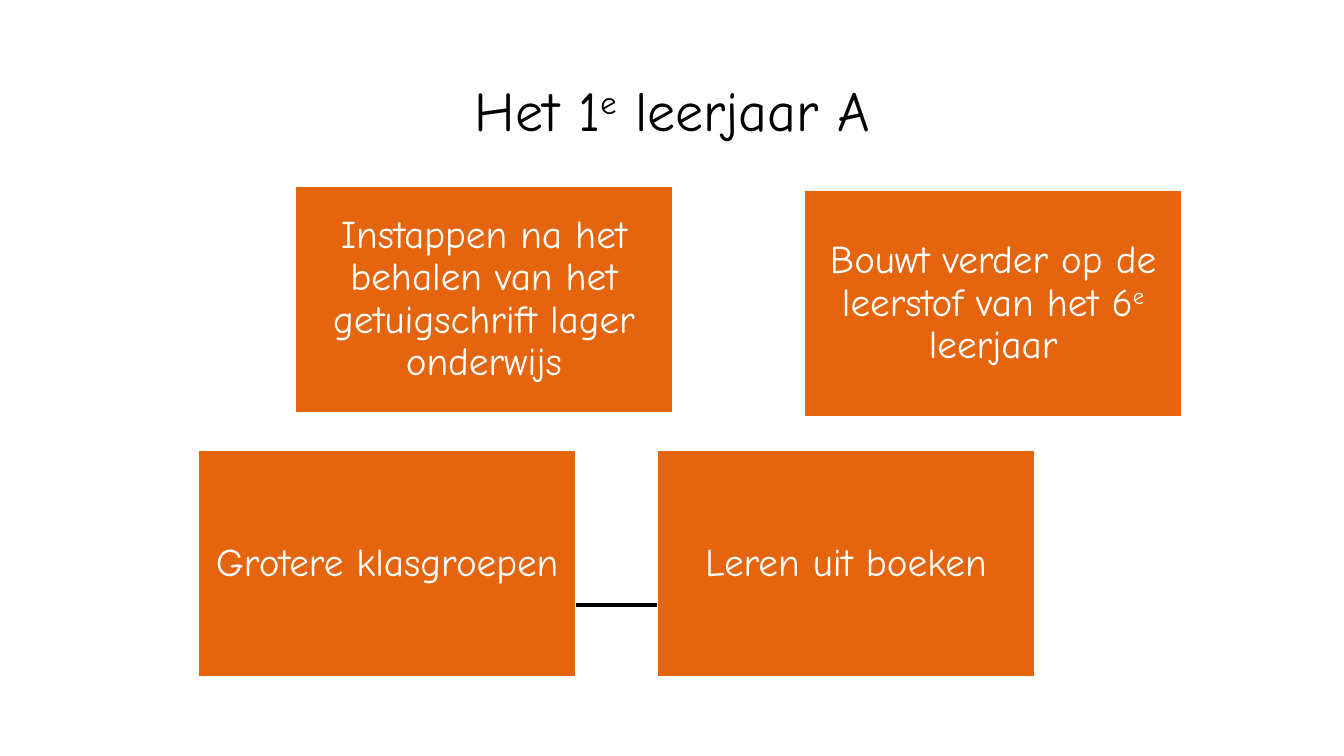
from pptx import Presentation
from pptx.dml.color import RGBColor
from pptx.enum.shapes import MSO_SHAPE
from pptx.enum.text import MSO_ANCHOR, PP_ALIGN
from pptx.util import Inches, Pt

TITLE = ["Het 1", "e", " leerjaar A"]
CARDS = [
    (2.93, 1.85, ["Instappen na het behalen van het getuigschrift lager onderwijs"]),
    (7.98, 1.89, ["Bouwt verder op de leerstof van het 6", "e", " leerjaar"]),
    (1.97, 4.47, ["Grotere klasgroepen"]),
    (6.52, 4.47, ["Leren uit boeken"]),
]
STROKE = [
    (4.35, 5.61, 5.64), (4.96, 5.61, 5.64), (5.72, 5.59, 5.64),
    (6.1, 5.6, 5.63), (6.3, 5.62, 5.64), (6.52, 5.61, 5.62),
    (7.48, 5.61, 5.64), (8.99, 5.61, 5.64),
]
COLORS = {"card": "E4650E", "paper": "FFFFFF", "ink": "000000"}
FONT = "Comic Neue"
WIDE, HIGH = 3.74, 2.24
INSET = Inches(0.12)


def color(name):
    return RGBColor.from_string(COLORS[name])


def paint(shape, fill, line, width):
    shape.shadow.inherit = False
    shape.fill.solid()
    shape.fill.fore_color.rgb = color(fill)
    shape.line.color.rgb = color(line)
    shape.line.width = Pt(width)


def write(frame, parts, size, ink):
    frame.word_wrap = True
    frame.vertical_anchor = MSO_ANCHOR.MIDDLE
    para = frame.paragraphs[0]
    para.alignment = PP_ALIGN.CENTER
    para.line_spacing = 0.9
    for part in parts:
        run = para.add_run()
        run.text = part
        run.font.name = FONT
        run.font.size = Pt(size)
        run.font.color.rgb = color(ink)
        if part == "e":
            run._r.get_or_add_rPr().set("baseline", "30000")


def place(shape, left, top, width, height):
    shape.left, shape.top = Inches(left), Inches(top)
    shape.width, shape.height = Inches(width), Inches(height)


def main():
    deck = Presentation()
    deck.slide_width, deck.slide_height = Inches(13.33), Inches(7.5)
    slide = deck.slides.add_slide(deck.slide_layouts[5])
    shapes = slide.shapes

    title = shapes.title
    place(title, 0.92, 0.4, 11.5, 1.45)
    write(title.text_frame, TITLE, 40, "ink")

    upper = [(x, top) for x, top, low in STROKE]
    lower = [(x, low) for x, top, low in reversed(STROKE)]
    pen = shapes.build_freeform(*upper[0], scale=Inches(1))
    pen.add_line_segments(upper[1:] + lower, close=True)
    paint(pen.convert_to_shape(), "ink", "ink", 3)

    for left, top, parts in CARDS:
        card = shapes.add_shape(
            MSO_SHAPE.RECTANGLE, Inches(left), Inches(top), Inches(WIDE), Inches(HIGH)
        )
        paint(card, "card", "paper", 1)
        frame = card.text_frame
        frame.margin_left = frame.margin_right = INSET
        frame.margin_top = frame.margin_bottom = INSET
        write(frame, parts, 28, "paper")

    deck.save("out.pptx")


if __name__ == "__main__":
    main()
